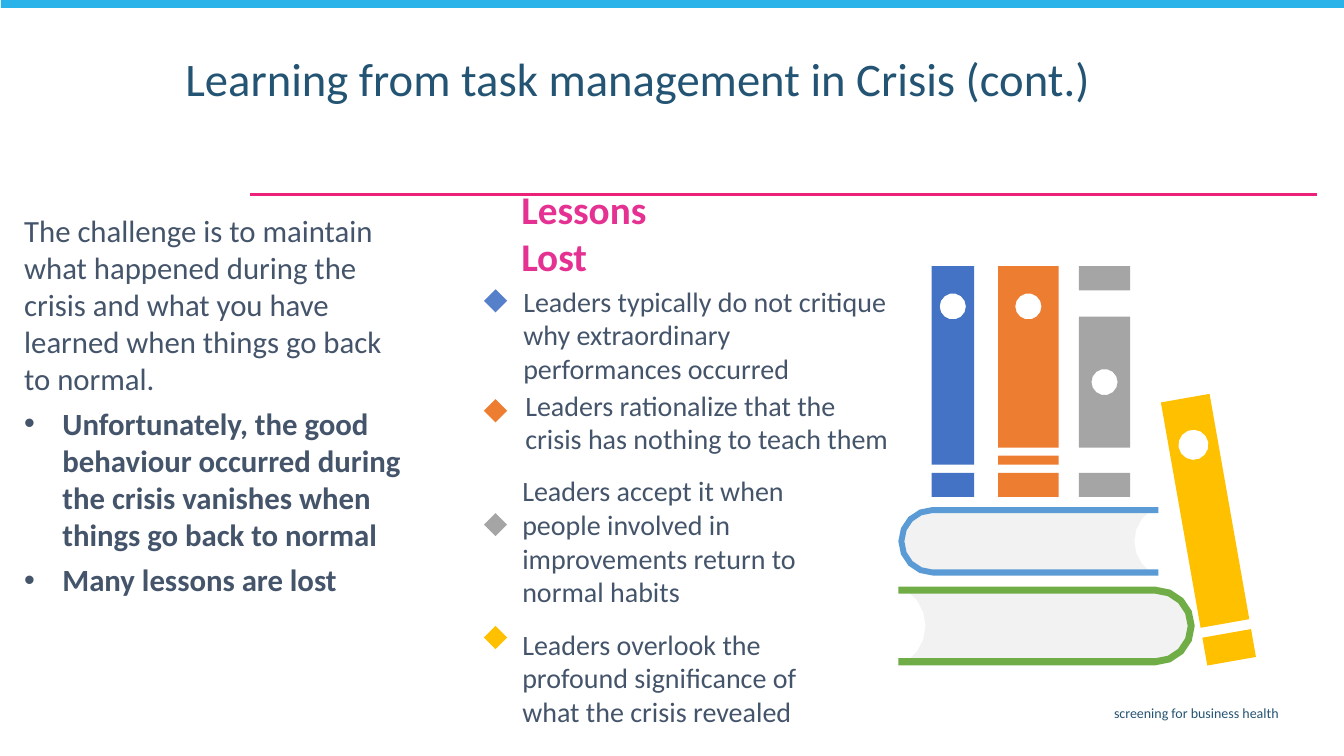
import math
from dataclasses import dataclass

from lxml import etree
from pptx import Presentation
from pptx import util as u
from pptx.dml.color import RGBColor
from pptx.enum import shapes, text
from pptx.oxml import ns


@dataclass(frozen=True)
class Theme:
    font: str = "Calibri"
    navy: str = "245473"
    slate: str = "44546A"
    pink: str = "E53292"
    rule: str = "EC2179"
    bar: str = "29B3E8"
    paper: str = "F2F2F2"
    blue: str = "4472C4"
    light_blue: str = "5780CA"
    sky: str = "5B9BD5"
    orange: str = "ED7D31"
    grey: str = "A5A5A5"
    green: str = "70AD47"
    gold: str = "FFC000"
    title_size: float = 33.3
    heading_size: float = 28
    body_size: float = 22
    lesson_size: float = 20
    footer_size: float = 10


def arc(x, y, radius, start, end, side=1, steps=8):
    """Points of a circular arc; side -1 mirrors it to the left."""
    angles = [math.radians(start + (end - start) * i / steps) for i in range(steps + 1)]
    return [(x + side * radius * math.cos(a), y + radius * math.sin(a)) for a in angles]


class SlideBuilder:
    def __init__(self, slide, theme):
        self.slide = slide
        self.theme = theme

    def paint(self, shape, colour):
        shape.shadow.inherit = False
        shape.fill.solid()
        shape.fill.fore_color.rgb = RGBColor.from_string(colour)
        shape.line.fill.background()
        return shape

    def preset(self, kind, left, top, width, height, colour):
        shape = self.slide.shapes.add_shape(kind, *map(u.Inches, (left, top, width, height)))
        return self.paint(shape, colour)

    def rule(self, left, right, y, colour, width):
        line = self.slide.shapes.add_connector(
            shapes.MSO_CONNECTOR.STRAIGHT, *map(u.Inches, (right, y, left, y)))
        line.line.color.rgb = RGBColor.from_string(colour)
        line.line.width = u.Pt(width)
        etree.SubElement(line._element.spPr, ns.qn("a:effectLst"))

    def outline(self, contours, colour):
        builder = None
        for contour in contours:
            start, *rest = [(u.Inches(x), u.Inches(y)) for x, y in contour]
            if builder is None:
                builder = self.slide.shapes.build_freeform(*start)
            else:
                builder.move_to(*start)
            builder.add_line_segments(rest, close=True)
        return self.paint(builder.convert_to_shape(), colour)

    def standing_book(self, left, right, bands, hole_y, hole_radius, colour, rotation=0):
        contours = [[(left, top), (left, bottom), (right, bottom), (right, top)]
                    for top, bottom in bands]
        contours.append(arc((left + right) / 2, hole_y, hole_radius, 0, 360, steps=14)[:-1])
        self.outline(contours, colour).rotation = rotation

    def lying_book(self, cap_x, middle, radius, board, cover_end, page_end, bow, side, colour):
        # Pages: round at the spine, hollow at the open edge
        page = radius - board / 2
        bend = (bow ** 2 + page ** 2) / (2 * bow)
        half = math.degrees(math.asin(page / bend))
        hollow_x = page_end + side * (bow - bend)
        self.outline([arc(cap_x, middle, page, -90, 90, side, steps=6)
                      + arc(hollow_x, middle, bend, half, -half, side, steps=6)],
                     self.theme.paper)
        # Cover wrapped around the pages
        inner = radius - board
        ends = [(cover_end, middle + y) for y in (radius, inner, -inner, -radius)]
        self.outline([arc(cap_x, middle, radius, -90, 90, side) + ends[:2]
                      + arc(cap_x, middle, inner, 90, -90, side) + ends[2:]], colour)

    def text(self, area, paragraphs, size, colour, bold=False, align=None, bullets_from=None,
             space=0, line_spacing=None, inset=(0.1, 0.05), anchor=text.MSO_ANCHOR.TOP,
             grow=False):
        box = self.slide.shapes.add_textbox(*map(u.Inches, area))
        frame = box.text_frame
        frame.word_wrap = True
        if grow:
            frame.auto_size = text.MSO_AUTO_SIZE.SHAPE_TO_FIT_TEXT
        frame.vertical_anchor = anchor
        frame.margin_left = frame.margin_right = u.Inches(inset[0])
        frame.margin_top = frame.margin_bottom = u.Inches(inset[1])
        for index, words in enumerate(paragraphs):
            para = frame.add_paragraph() if index else frame.paragraphs[0]
            bulleted = bullets_from is not None and index >= bullets_from
            if bulleted:
                self.bullet(para)
            if index:
                para.space_before = u.Pt(space)
            if align is not None:
                para.alignment = align
            if line_spacing:
                para.line_spacing = line_spacing
            span = para.add_run()
            span.text = words
            span.font.name = self.theme.font
            span.font.size = u.Pt(size)
            span.font.bold = bold or bulleted
            span.font.color.rgb = RGBColor.from_string(colour)

    def bullet(self, para):
        properties = para._p.get_or_add_pPr()
        properties.set("marL", str(u.Inches(0.38)))
        properties.set("indent", str(u.Inches(-0.38)))
        etree.SubElement(properties, ns.qn("a:buFont")).set("typeface", "Arial")
        etree.SubElement(properties, ns.qn("a:buChar")).set("char", "•")


def main():
    deck = Presentation()
    deck.slide_width, deck.slide_height = u.Inches(13.33), u.Inches(7.5)
    theme = Theme()
    page = SlideBuilder(deck.slides.add_slide(deck.slide_layouts[6]), theme)

    # Frame, footer and title
    page.rule(2.48, 13.06, 1.93, theme.rule, 1.5)
    page.preset(shapes.MSO_SHAPE.RECTANGLE, 0.01, -0.02, 13.34, 0.1, theme.bar)
    page.text((3.65, 6.94, 9.13, 0.29), ["screening for business health"],
              theme.footer_size, theme.navy, align=text.PP_ALIGN.RIGHT)
    page.text((1.74, 0.51, 9.68, 0.76), ["Learning from task management in Crisis (cont.)"],
              theme.title_size, theme.navy, line_spacing=0.9)

    # Challenge on the left
    page.text((0.15, 2.05, 4, 4.42), [
        "The challenge is to maintain what happened during the crisis and what you have "
        "learned when things go back to normal.",
        "Unfortunately, the good behaviour occurred during the crisis vanishes when things "
        "go back to normal",
        "Many lessons are lost",
    ], theme.body_size, theme.slate, bullets_from=1, space=6, inset=(0.09, 0.05), grow=True)

    page.text((5.08, 2.02, 2.12, 0.57), ["Lessons Lost"], theme.heading_size, theme.pink,
              bold=True, inset=(0.09, 0.04), anchor=text.MSO_ANCHOR.MIDDLE)

    # Books lying down
    page.lying_book(9.25, 5.37, 0.34, 0.06, 11.49, 11.42, 0.17, -1, theme.sky)
    page.lying_book(11.46, 6.21, 0.39, 0.07, 8.91, 8.99, 0.19, 1, theme.green)

    # Books standing up, the last one leaning
    foot = (4.69, 4.93)
    page.standing_book(9.24, 9.66, [(2.64, 4.61), foot], 3.04, 0.13, theme.blue)
    page.standing_book(9.9, 10.5, [(2.64, 4.44), (4.52, 4.61), foot], 3.04, 0.13, theme.orange)
    page.standing_book(10.7, 11.21, [(2.64, 2.88), (3.14, 4.44), foot], 3.79, 0.13, theme.grey)
    page.standing_book(11.74, 12.23, [(3.93, 6.2), (6.3, 6.58)], 4.4, 0.15, theme.gold, 350)

    # Lessons with their diamonds
    lessons = [
        (2.87, theme.light_blue, (5.15, 2.8, 3.73, 1.05),
         "Leaders typically do not critique why extraordinary performances occurred"),
        (3.96, theme.orange, (5.17, 3.83, 3.73, 0.71),
         "Leaders rationalize that the crisis has nothing to teach them"),
        (5.09, theme.grey, (5.14, 4.68, 3.07, 1.38),
         "Leaders accept it when people involved in improvements return to normal habits"),
        (6.21, theme.gold, (5.14, 6.2, 3.07, 1.05),
         "Leaders overlook the profound significance of what the crisis revealed"),
    ]
    for diamond_top, colour, area, lesson in lessons:
        page.preset(shapes.MSO_SHAPE.DIAMOND, 4.8, diamond_top, 0.23, 0.23, colour)
        page.text(area, [lesson], theme.lesson_size, theme.slate, inset=(0.04, 0.02), grow=True)

    deck.save("out.pptx")


if __name__ == "__main__":
    main()
